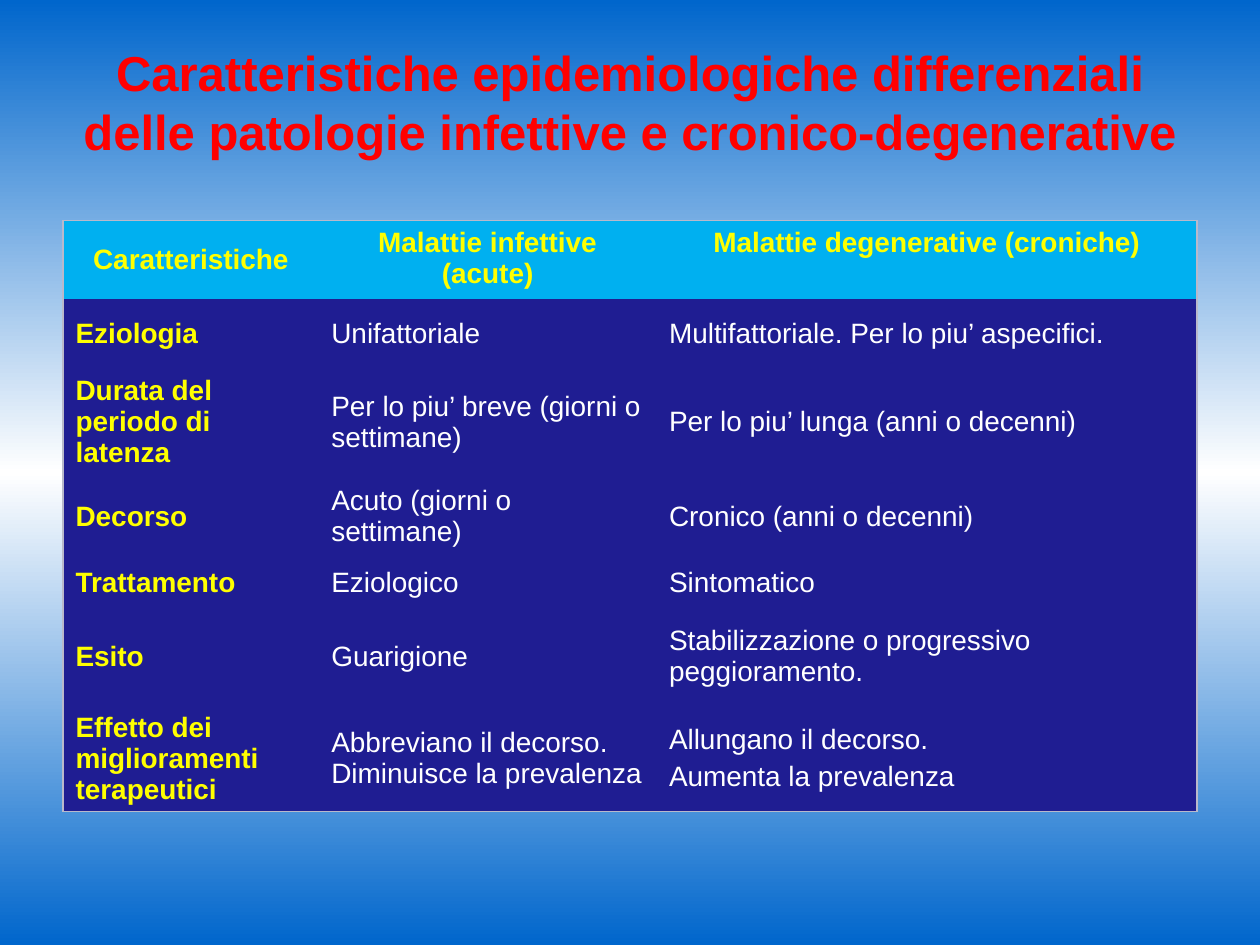
from copy import deepcopy

from lxml import etree
from pptx import Presentation
from pptx.dml.color import RGBColor
from pptx.enum.text import MSO_ANCHOR, PP_ALIGN
from pptx.oxml.ns import qn
from pptx.util import Inches, Pt

CENTER, LEFT = PP_ALIGN.CENTER, PP_ALIGN.LEFT
TOP, MIDDLE = MSO_ANCHOR.TOP, MSO_ANCHOR.MIDDLE

BLUE = RGBColor(0x00, 0x66, 0xCC)
WHITE = RGBColor(0xFF, 0xFF, 0xFF)
RED = RGBColor(0xFF, 0x00, 0x00)
YELLOW = RGBColor(0xFF, 0xFF, 0x00)
SKY = RGBColor(0x00, 0xB0, 0xF0)
NAVY = RGBColor(0x1F, 0x1D, 0x92)
BORDER = RGBColor(0xB9, 0xB9, 0xCB)

TITLE = "Caratteristiche epidemiologiche differenziali delle patologie infettive e cronico-degenerative"
COLUMN_WIDTHS = [2.03, 2.68, 4.29]
ROW_HEIGHTS = [0.62, 0.56, 0.84, 0.66, 0.39, 0.78, 0.84]
ROWS = [
    ["Caratteristiche", "Malattie infettive (acute)", "Malattie degenerative (croniche)"],
    ["Eziologia", "Unifattoriale", "Multifattoriale. Per lo piu’ aspecifici."],
    ["Durata del periodo di latenza", "Per lo piu’ breve (giorni o settimane)",
     "Per lo piu’ lunga (anni o decenni)"],
    ["Decorso", "Acuto (giorni o settimane)", "Cronico (anni o decenni)"],
    ["Trattamento", "Eziologico", "Sintomatico"],
    ["Esito", "Guarigione", "Stabilizzazione o progressivo peggioramento."],
    ["Effetto dei miglioramenti terapeutici", "Abbreviano il decorso. Diminuisce la prevalenza",
     "Allungano il decorso.\nAumenta la prevalenza"],
]


class SlideBuilder:
    font = "Arial"

    def __init__(self, deck):
        self.page = deck.slides.add_slide(deck.slide_layouts[5])

    def background(self, colors):
        fill = self.page.background.fill
        fill.gradient()
        fill.gradient_angle = 90
        stop_list = next(self.page._element.iter(qn("a:gsLst")))
        while len(stop_list) < len(colors):
            stop_list.append(deepcopy(stop_list[0]))
        for index, (stop, color) in enumerate(zip(fill.gradient_stops, colors)):
            stop.position = index / (len(colors) - 1)
            stop.color.rgb = color

    def styled_text(self, frame, text, size, color, bold, align):
        frame.text = text
        for index, para in enumerate(frame.paragraphs):
            para.alignment = align
            para.space_before = Pt(0.2 * size if index else 0)
            for span in para.runs:
                span.font.name = self.font
                span.font.size = Pt(size)
                span.font.bold = bold
                span.font.color.rgb = color

    def title(self, text, left, top, width, height):
        box = self.page.shapes.title
        box.left, box.top = Inches(left), Inches(top)
        box.width, box.height = Inches(width), Inches(height)
        box.text_frame.vertical_anchor = MIDDLE
        self.styled_text(box.text_frame, text, 28, RED, True, CENTER)

    def borders(self, cell, outer_edges):
        properties = cell._tc.get_or_add_tcPr()
        for edge, is_outer in outer_edges.items():
            line = etree.SubElement(properties, qn(f"a:ln{edge}"), w=str(Pt(0.75)))
            if is_outer:
                solid = etree.SubElement(line, qn("a:solidFill"))
                etree.SubElement(solid, qn("a:srgbClr"), val=str(BORDER))
            else:
                etree.SubElement(line, qn("a:noFill"))

    def table(self, rows, left, top, widths, heights):
        table = self.page.shapes.add_table(
            len(rows), len(widths), Inches(left), Inches(top),
            Inches(sum(widths)), Inches(sum(heights))).table
        table.horz_banding = False
        for column, width in zip(table.columns, widths):
            column.width = Inches(width)
        for row, height in zip(table.rows, heights):
            row.height = Inches(height)
        last_row, last_column = len(rows) - 1, len(widths) - 1
        for r, texts in enumerate(rows):
            for c, text in enumerate(texts):
                cell = table.cell(r, c)
                header, label = r == 0, r == 0 or c == 0
                self.borders(cell, {"L": c == 0, "R": c == last_column,
                                    "T": header, "B": r == last_row})
                cell.fill.solid()
                cell.fill.fore_color.rgb = SKY if header else NAVY
                cell.vertical_anchor = TOP if header and c else MIDDLE
                self.styled_text(cell.text_frame, text, 16, YELLOW if label else WHITE,
                                 label, CENTER if header else LEFT)


def main():
    deck = Presentation()
    deck.slide_width, deck.slide_height = Inches(10), Inches(7.5)
    slide = SlideBuilder(deck)
    slide.background([BLUE, WHITE, BLUE])
    slide.title(TITLE, 0.5, 0.3, 9, 1.01)
    slide.table(ROWS, 0.5, 1.75, COLUMN_WIDTHS, ROW_HEIGHTS)
    deck.save("out.pptx")


if __name__ == "__main__":
    main()
